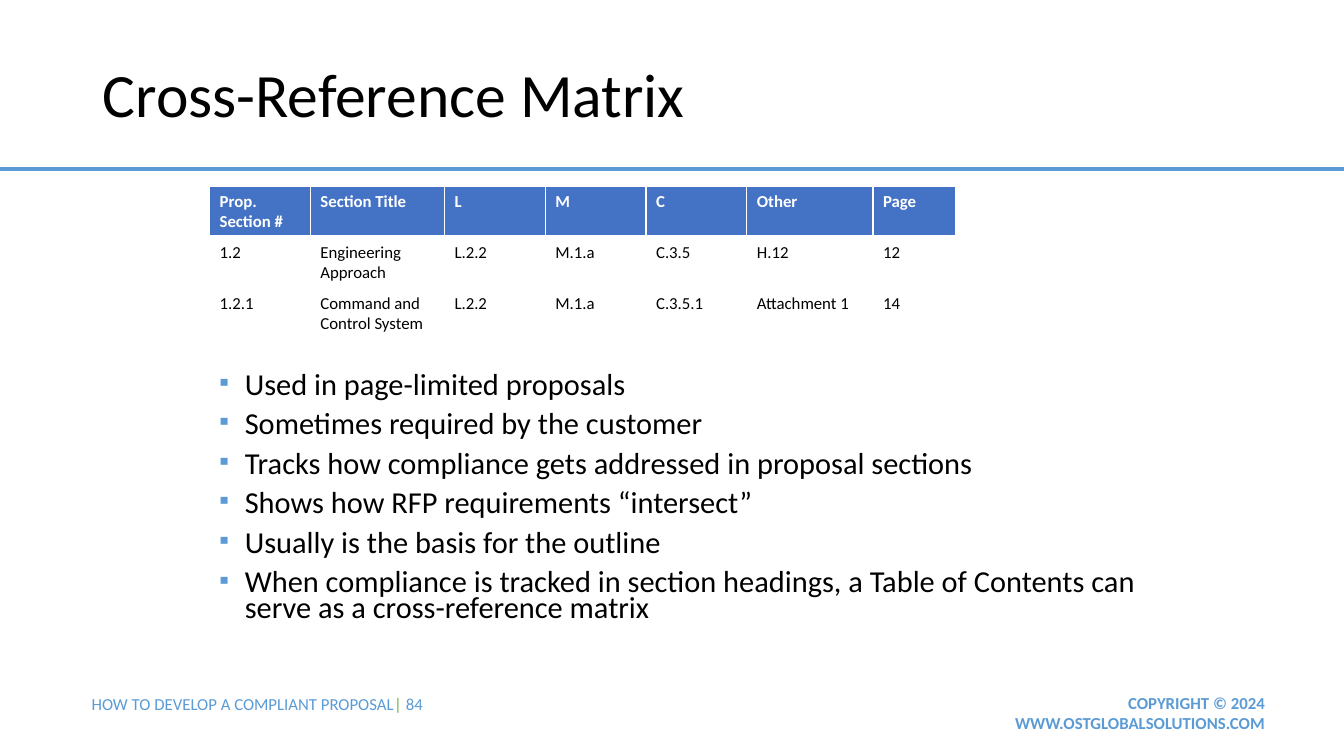
import pptx
import pptx.dml.color
import pptx.enum.shapes
import pptx.enum.text
import pptx.oxml.ns
import pptx.util
import lxml.etree

Cm = pptx.util.Cm
Pt = pptx.util.Pt
ALIGN = pptx.enum.text.PP_ALIGN
ANCHOR = pptx.enum.text.MSO_ANCHOR

SLIDE_WIDTH, SLIDE_HEIGHT = 33.87, 19.05
BLUE, HEADER_BLUE, GREEN = "5B9BD5", "4472C4", "70AD47"
BLACK, WHITE = "000000", "FFFFFF"

COLUMN_WIDTHS = [2.54, 3.38, 2.54, 2.54, 2.54, 3.18, 2.08]
MATRIX = [
    ["Prop. Section #", "Section Title", "L", "M", "C", "Other", "Page"],
    ["1.2", "Engineering Approach", "L.2.2", "M.1.a", "C.3.5", "H.12", "12"],
    ["1.2.1", "Command and Control System", "L.2.2", "M.1.a", "C.3.5.1", "Attachment 1", "14"],
]
POINTS = [
    "Used in page-limited proposals",
    "Sometimes required by the customer",
    "Tracks how compliance gets addressed in proposal sections",
    "Shows how RFP requirements “intersect”",
    "Usually is the basis for the outline",
    "When compliance is tracked in section headings, a Table of Contents can "
    "serve as a cross-reference matrix",
]


def color(hex_value):
    """Turn a hex string into a colour."""
    return pptx.dml.color.RGBColor.from_string(hex_value)


def add_child(parent, tag, **attributes):
    """Append a DrawingML element to a parent."""
    return lxml.etree.SubElement(parent, pptx.oxml.ns.qn(tag), attributes)


def add_run(paragraph, words, size, hex_value, bold=False):
    """Append one formatted run to a paragraph."""
    run = paragraph.add_run()
    run.text = words
    run.font.name = "Calibri"
    run.font.size = Pt(size)
    run.font.bold = bold
    run.font.color.rgb = color(hex_value)


def add_frame(slide, box, anchor=ANCHOR.TOP):
    """Add a wrapping text box and return its text frame."""
    frame = slide.shapes.add_textbox(*map(Cm, box)).text_frame
    frame.word_wrap = True
    frame.vertical_anchor = anchor
    return frame


def add_title(slide, box):
    """Place the slide title."""
    heading = add_frame(slide, box, ANCHOR.MIDDLE).paragraphs[0]
    heading.line_spacing = 0.9
    add_run(heading, "Cross-Reference Matrix", 44, BLACK)


def add_rule(slide, box):
    """Draw the horizontal rule along the top of its box."""
    left, top, width, _ = box
    rule = slide.shapes.add_connector(
        pptx.enum.shapes.MSO_CONNECTOR.STRAIGHT,
        Cm(left), Cm(top), Cm(left + width), Cm(top))
    rule.line.color.rgb = color(BLUE)
    rule.line.width = Pt(3)
    add_child(rule._element.spPr, "a:effectLst")


def set_borders(cell, bottom_width):
    """Give a cell white borders with its own bottom width."""
    properties = cell._tc.get_or_add_tcPr()
    sides = [("a:lnL", 1), ("a:lnR", 1), ("a:lnT", 1), ("a:lnB", bottom_width)]
    for position, (tag, width) in enumerate(sides):
        border = add_child(properties, tag, w=str(Pt(width)))
        add_child(add_child(border, "a:solidFill"), "a:srgbClr", val=WHITE)
        properties.insert(position, border)


def add_matrix(slide, box):
    """Build the cross-reference table."""
    matrix = slide.shapes.add_table(len(MATRIX), len(COLUMN_WIDTHS), *map(Cm, box)).table
    for column, width in zip(matrix.columns, COLUMN_WIDTHS):
        column.width = Cm(width)
    for row_index, entries in enumerate(MATRIX):
        is_header = row_index == 0
        for column_index, entry in enumerate(entries):
            cell = matrix.cell(row_index, column_index)
            if is_header:
                cell.fill.solid()
                cell.fill.fore_color.rgb = color(HEADER_BLUE)
            else:
                cell.fill.background()
            set_borders(cell, 3 if is_header else 1)
            add_run(cell.text_frame.paragraphs[0], entry, 12,
                    WHITE if is_header else BLACK, is_header)


def add_points(slide, box):
    """List the bullet points."""
    frame = add_frame(slide, box)
    for index, point in enumerate(POINTS):
        paragraph = frame.add_paragraph() if index else frame.paragraphs[0]
        properties = paragraph._p.get_or_add_pPr()
        properties.set("marL", str(Cm(0.64)))
        properties.set("indent", str(-Cm(0.64)))
        add_child(add_child(properties, "a:buClr"), "a:srgbClr", val=BLUE)
        add_child(properties, "a:buSzPct", val="90000")
        add_child(properties, "a:buFont", typeface="Calibri")
        add_child(properties, "a:buChar", char="▪")
        paragraph.line_spacing = 0.7
        paragraph.space_before = Pt(10 if index else 0)
        add_run(paragraph, point, 21.7, BLACK)


def add_footer(slide, box):
    """Place the course name and page on the left, the copyright on the right."""
    left, top, width, height = box
    course = add_frame(slide, (left, top, 12.24, 0.76)).paragraphs[0]
    add_run(course, "HOW TO DEVELOP A COMPLIANT PROPOSAL", 12, BLUE)
    add_run(course, "| ", 12, GREEN)
    add_run(course, "84", 12, BLUE)
    rights_width = 6.93
    rights_box = (left + width - rights_width, top - 0.03, rights_width, height)
    rights = add_frame(slide, rights_box).paragraphs[0]
    rights.alignment = ALIGN.RIGHT
    add_run(rights, "COPYRIGHT © 2024 WWW.OSTGLOBALSOLUTIONS.COM", 12, BLUE, True)


def main():
    """Build and save the slide."""
    deck = pptx.Presentation()
    deck.slide_width, deck.slide_height = Cm(SLIDE_WIDTH), Cm(SLIDE_HEIGHT)
    slide = deck.slides.add_slide(deck.slide_layouts[6])
    add_rule(slide, (0, 4.25, SLIDE_WIDTH, 0))
    add_footer(slide, (2.06, 17.35, 30.07, 1.27))
    add_title(slide, (2.34, 1.02, 20.04, 2.9))
    add_matrix(slide, (5.28, 4.7, sum(COLUMN_WIDTHS), 3.84))
    add_points(slide, (5.28, 9.32, 23.67, 6.99))
    deck.save("out.pptx")


if __name__ == "__main__":
    main()
